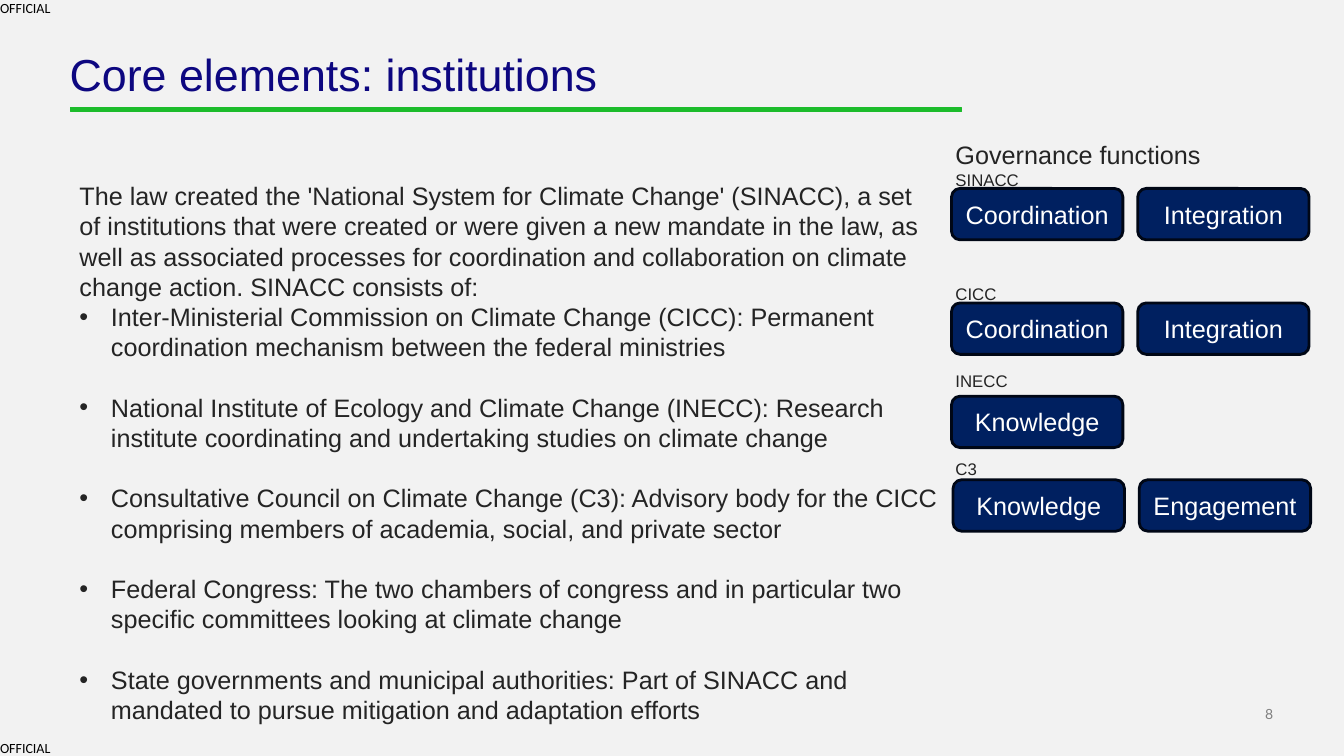
import pptx
import pptx.util
import pptx.dml.color
import pptx.enum.shapes
import pptx.enum.text
import pptx.oxml.ns
import lxml.etree

Pt = pptx.util.Pt
ALIGN = pptx.enum.text.PP_ALIGN
ANCHOR = pptx.enum.text.MSO_ANCHOR
SHAPE = pptx.enum.shapes.MSO_SHAPE

# Content
TITLE = "Core elements: institutions"
MARKING = "OFFICIAL"
PAGE_NUMBER = "8"
INTRO = (
    "The law created the 'National System for Climate Change' (SINACC), a set of "
    "institutions that were created or were given a new mandate in the law, as well as "
    "associated processes for coordination and collaboration on climate change action. "
    "SINACC consists of:"
)
INSTITUTIONS = [
    "Inter-Ministerial Commission on Climate Change (CICC): Permanent coordination "
    "mechanism between the federal ministries",
    "National Institute of Ecology and Climate Change (INECC): Research institute "
    "coordinating and undertaking studies on climate change",
    "Consultative Council on Climate Change (C3): Advisory body for the CICC comprising "
    "members of academia, social, and private sector",
    "Federal Congress: The two chambers of congress and in particular two specific "
    "committees looking at climate change",
    "State governments and municipal authorities: Part of SINACC and mandated to pursue "
    "mitigation and adaptation efforts",
]
FUNCTIONS_HEADING = "Governance functions"
# Body name, space above its label, left and top of its first box, functions
GOVERNANCE = [
    ("SINACC", 0, 679.7, 134.6, ["Coordination", "Integration"]),
    ("CICC", 67.2, 679.7, 216.4, ["Coordination", "Integration"]),
    ("INECC", 48, 679.7, 283, ["Knowledge"]),
    ("C3", 48, 680.8, 342.7, ["Knowledge", "Engagement"]),
]
COLORS = {
    "background": "F2F2F2",
    "title": "0D0780",
    "rule": "1CBC2B",
    "text": "242424",
    "box": "002060",
    "box_line": "000716",
    "box_text": "FFFFFF",
    "marking": "000000",
    "number": "7F7F7F",
}
LINE_FACTOR = 1.2
BODY_SIZE, LABEL_SIZE = 18, 12
BOX_WIDTH, BOX_HEIGHT, BOX_STEP = 122.4, 36.7, 133
BULLET_INDENT = 22.5


def color(name):
    return pptx.dml.color.RGBColor.from_string(COLORS[name])


def format_text(paragraph, size, color_name, font="Arial"):
    for run in paragraph.runs:
        run.font.size = Pt(size)
        run.font.name = font
        run.font.color.rgb = color(color_name)


def set_margins(text_frame, horizontal, vertical):
    text_frame.margin_left = text_frame.margin_right = Pt(horizontal)
    text_frame.margin_top = text_frame.margin_bottom = Pt(vertical)


def add_text_box(slide, left, top, width, height, paragraphs):
    """Each paragraph is (text, size, space before, bulleted)."""
    text_frame = slide.shapes.add_textbox(Pt(left), Pt(top), Pt(width), Pt(height)).text_frame
    text_frame.word_wrap = True
    set_margins(text_frame, 7.2, 3.6)
    for index, (text, size, space, bulleted) in enumerate(paragraphs):
        paragraph = text_frame.add_paragraph() if index else text_frame.paragraphs[0]
        paragraph.text = text
        paragraph.line_spacing = Pt(size * LINE_FACTOR)
        paragraph.space_before = Pt(space)
        if bulleted:
            add_bullet(paragraph)
        format_text(paragraph, size, "text")


def add_bullet(paragraph):
    properties = paragraph._p.get_or_add_pPr()
    properties.set("marL", str(Pt(BULLET_INDENT)))
    properties.set("indent", str(-Pt(BULLET_INDENT)))
    qn = pptx.oxml.ns.qn
    font = lxml.etree.SubElement(properties, qn("a:buFont"))
    font.set("typeface", "Arial")
    lxml.etree.SubElement(properties, qn("a:buChar")).set("char", "•")


def add_small_text(slide, left, top, width, text, font, color_name, align):
    text_frame = slide.shapes.add_textbox(Pt(left), Pt(top), Pt(width), Pt(12)).text_frame
    set_margins(text_frame, 0, 0)
    text_frame.word_wrap = True
    text_frame.text = text
    paragraph = text_frame.paragraphs[0]
    paragraph.alignment = align
    format_text(paragraph, 10, color_name, font)


def add_filled_shape(slide, kind, left, top, width, height, fill, line, line_width):
    shape = slide.shapes.add_shape(kind, Pt(left), Pt(top), Pt(width), Pt(height))
    shape.shadow.inherit = False
    shape.fill.solid()
    shape.fill.fore_color.rgb = color(fill)
    shape.line.color.rgb = color(line)
    shape.line.width = Pt(line_width)
    return shape


def add_function_box(slide, left, top, text):
    box = add_filled_shape(slide, SHAPE.ROUNDED_RECTANGLE, left, top, BOX_WIDTH, BOX_HEIGHT,
                           "box", "box_line", 2)
    text_frame = box.text_frame
    text_frame.word_wrap = True
    set_margins(text_frame, 7.2, 3.6)
    text_frame.vertical_anchor = ANCHOR.MIDDLE
    text_frame.text = text
    text_frame.paragraphs[0].alignment = ALIGN.CENTER
    format_text(text_frame.paragraphs[0], BODY_SIZE, "box_text")


def main():
    presentation = pptx.Presentation()
    presentation.slide_width, presentation.slide_height = Pt(960), Pt(540)
    slide = presentation.slides.add_slide(presentation.slide_layouts[5])
    slide.background.fill.solid()
    slide.background.fill.fore_color.rgb = color("background")

    # Page number and markings
    add_small_text(slide, 879, 504, 30.5, PAGE_NUMBER, "Lato", "number", ALIGN.RIGHT)
    for top in (0, 528):
        add_small_text(slide, 0, top, 38, MARKING, "Calibri", "marking", ALIGN.LEFT)

    # Title and rule
    title = slide.shapes.title
    title.left, title.top, title.width, title.height = Pt(49.7), Pt(37.4), Pt(638), Pt(34.6)
    text_frame = title.text_frame
    set_margins(text_frame, 0, 0)
    text_frame.auto_size = pptx.enum.text.MSO_AUTO_SIZE.NONE
    text_frame.vertical_anchor = ANCHOR.TOP
    text_frame.text = TITLE
    text_frame.paragraphs[0].alignment = ALIGN.LEFT
    text_frame.paragraphs[0].line_spacing = 0.9
    format_text(text_frame.paragraphs[0], 32, "title")
    add_filled_shape(slide, SHAPE.RECTANGLE, 50.4, 76.9, 636.5, 2.9, "rule", "rule", 0.75)

    # Institutions, one blank line's height between bullets
    body = [(INTRO, BODY_SIZE, 0, False)]
    for index, text in enumerate(INSTITUTIONS):
        space = BODY_SIZE * LINE_FACTOR if index else 0
        body.append((text, BODY_SIZE, space, True))
    add_text_box(slide, 49.7, 125.3, 627.8, 400, body)

    # Governance functions
    labels = [(FUNCTIONS_HEADING, BODY_SIZE, 0, False)]
    for name, space, left, top, functions in GOVERNANCE:
        labels.append((name, LABEL_SIZE, space, False))
        for column, function in enumerate(functions):
            add_function_box(slide, left + column * BOX_STEP, top, function)
    add_text_box(slide, 675.4, 95.8, 264, 252, labels)

    presentation.save("out.pptx")


if __name__ == "__main__":
    main()
